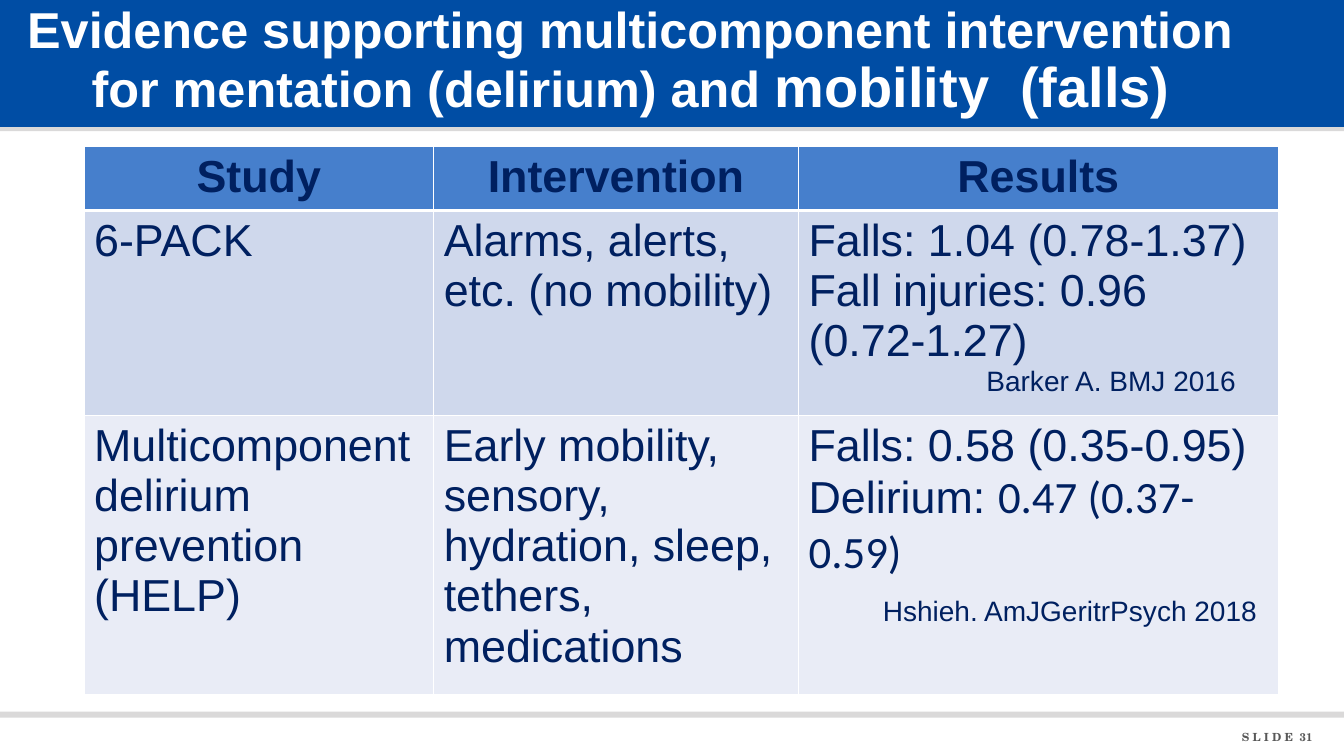
from lxml import etree
from pptx import Presentation
from pptx.dml.color import RGBColor
from pptx.enum.shapes import MSO_SHAPE
from pptx.enum.text import MSO_ANCHOR, PP_ALIGN
from pptx.oxml.ns import qn
from pptx.util import Pt

RECTANGLE = MSO_SHAPE.RECTANGLE
TOP, MIDDLE = MSO_ANCHOR.TOP, MSO_ANCHOR.MIDDLE
LEFT, CENTER, RIGHT = PP_ALIGN.LEFT, PP_ALIGN.CENTER, PP_ALIGN.RIGHT

WHITE = RGBColor(0xFF, 0xFF, 0xFF)
GREY = RGBColor(0xDA, 0xD9, 0xD9)
BLUE = RGBColor(0x00, 0x4D, 0xA4)
NAVY = RGBColor(0x00, 0x20, 0x60)
FOOTER_GREY = RGBColor(0x58, 0x58, 0x58)
ROW_FILLS = [RGBColor(0x46, 0x7F, 0xCC), RGBColor(0xCF, 0xD8, 0xEC),
             RGBColor(0xE9, 0xEC, 0xF6)]


class EvidenceSlide:
    """Holds the style and the slide being built."""

    font = "Arial"
    body_size = 32
    citation_size = 20

    def __init__(self, slide):
        self.slide = slide

    def set_font(self, font, size, color, bold=False, name=None):
        font.name = name or self.font
        font.size = Pt(size)
        font.color.rgb = color
        font.bold = bold

    def band(self, top, height, color):
        band = self.slide.shapes.add_shape(
            RECTANGLE, 0, Pt(top), Pt(960), Pt(height))
        band.shadow.inherit = False
        band.fill.solid()
        band.fill.fore_color.rgb = color
        band.line.fill.background()

    def text(self, box, parts, color, align, anchor=TOP, inset=7.2,
             name=None, line_spacing=None):
        """Bold one-paragraph text; parts is a list of (words, size)."""
        frame = self.slide.shapes.add_textbox(*map(Pt, box)).text_frame
        frame.word_wrap = True
        frame.vertical_anchor = anchor
        frame.margin_left = Pt(inset)
        paragraph = frame.paragraphs[0]
        paragraph.alignment = align
        if line_spacing:
            paragraph.line_spacing = line_spacing
        self.set_font(paragraph.font, parts[0][1], color, True, name)
        for words, size in parts:
            run = paragraph.add_run()
            run.text = words
            self.set_font(run.font, size, color, True, name)

    def border(self, cell, side, width):
        line = etree.SubElement(cell._tc.get_or_add_tcPr(), qn("a:ln" + side),
                                w=str(Pt(width)))
        fill = etree.SubElement(line, qn("a:solidFill"))
        etree.SubElement(fill, qn("a:srgbClr"), val=str(WHITE))

    def cell_lines(self, cell, lines, header):
        """Fill a cell with lines, each a list of (words, font name)."""
        frame = cell.text_frame
        for i, line in enumerate(lines):
            paragraph = frame.add_paragraph() if i else frame.paragraphs[0]
            paragraph.alignment = CENTER if header else LEFT
            self.set_font(paragraph.font, self.body_size, NAVY, header)
            for words, name in line:
                run = paragraph.add_run()
                run.text = words
                self.set_font(run.font, self.body_size, NAVY, header, name)

    def citation(self, cell, words, indent, space_before):
        paragraph = cell.text_frame.add_paragraph()
        paragraph._p.get_or_add_pPr().set("marL", str(Pt(indent)))
        paragraph.space_before = Pt(space_before)
        paragraph.text = words
        self.set_font(paragraph.font, self.citation_size, NAVY)

    def table(self, left, top, widths, heights, rows):
        table = self.slide.shapes.add_table(
            len(rows), len(widths), Pt(left), Pt(top),
            Pt(sum(widths)), Pt(sum(heights))).table
        for column, width in zip(table.columns, widths):
            column.width = Pt(width)
        for r, (row, height) in enumerate(zip(rows, heights)):
            table.rows[r].height = Pt(height)
            for c, lines in enumerate(row):
                cell = table.cell(r, c)
                self.border(cell, "L", 1)
                self.border(cell, "R", 1)
                self.border(cell, "T", 3 if r == 1 else 1)
                self.border(cell, "B", 3 if r == 0 else 1)
                cell.fill.solid()
                cell.fill.fore_color.rgb = ROW_FILLS[r]
                self.cell_lines(cell, lines, header=r == 0)
        return table


def plain(*lines):
    return [[(line, None)] for line in lines]


def main():
    deck = Presentation()
    deck.slide_width, deck.slide_height = Pt(960), Pt(540)
    page = EvidenceSlide(deck.slides.add_slide(deck.slide_layouts[6]))

    # Title band, footer rule and slide number
    page.band(75.6, 18, GREY)
    page.band(-0.7, 91.4, BLUE)
    page.band(508.3, 4.3, GREY)
    page.text((808.6, 518.4, 136.1, 16.6), [("S L I D E  31", 8)],
              FOOTER_GREY, RIGHT, MIDDLE, name="TeX Gyre Schola")

    # Title
    page.text((13.7, 0, 880.6, 104.4),
              [("Evidence supporting multicomponent intervention "
                "for mentation (delirium) and ", 36),
               ("mobility  (falls)", 40)],
              WHITE, CENTER, inset=0, line_spacing=0.9)

    # Evidence table
    evidence = page.table(60, 104.7, [249.8, 260.6, 342.7], [43, 137, 186], [
        [plain("Study"), plain("Intervention"), plain("Results")],
        [plain("6-PACK"),
         plain("Alarms, alerts, etc. (no mobility)"),
         plain("Falls: 1.04 (0.78-1.37)", "Fall injuries: 0.96 (0.72-1.27)")],
        [plain("Multicomponent delirium prevention (HELP)"),
         plain("Early mobility, sensory, hydration, sleep, tethers, medications"),
         plain("Falls: 0.58 (0.35-0.95)")
         + [[("Delirium: ", None), ("0.47 (0.37-0.59)", "Calibri")]]],
    ])
    page.citation(evidence.cell(1, 2), "Barker A. BMJ\u00a02016", 127, 0)
    page.citation(evidence.cell(2, 2), "Hshieh. AmJGeritrPsych 2018", 53, 11)

    deck.save("out.pptx")


if __name__ == "__main__":
    main()
